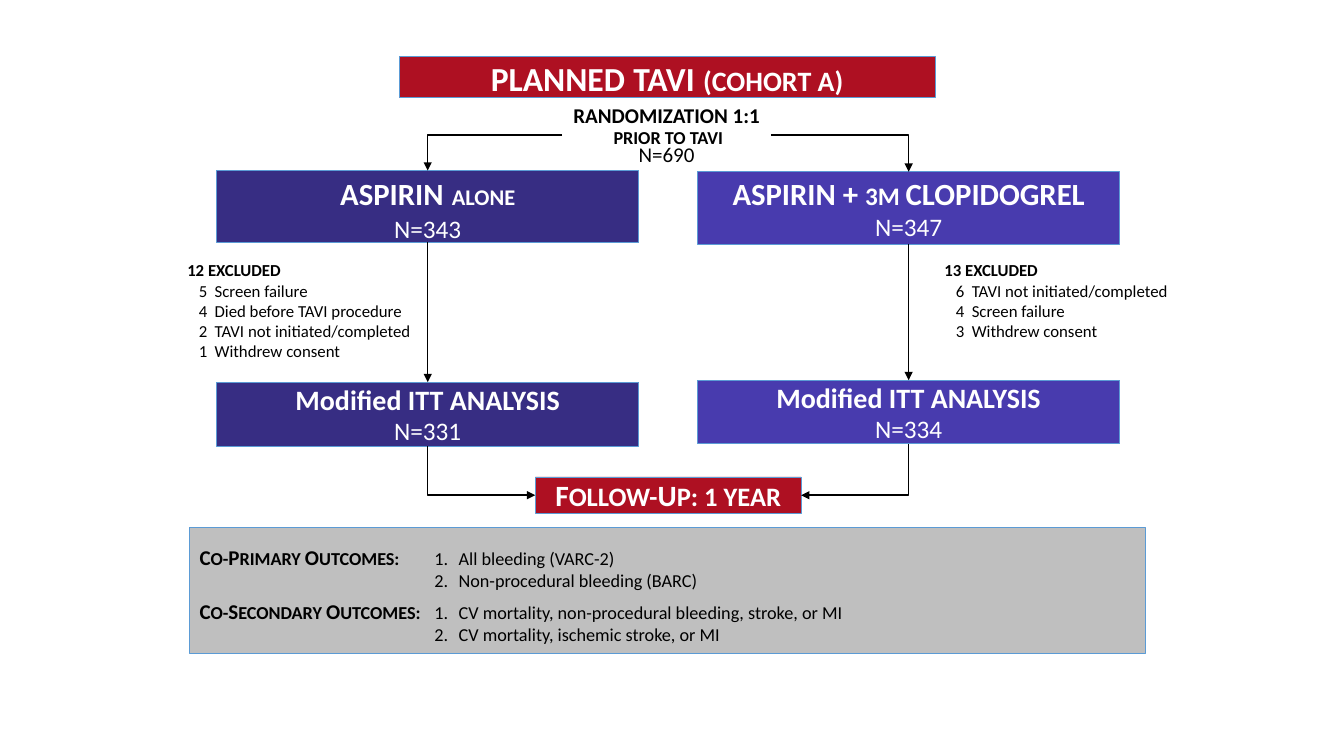
"""Build the flow chart of the TAVI trial, cohort A."""
from lxml.etree import SubElement
from pptx import Presentation
from pptx.dml.color import RGBColor
from pptx.enum.shapes import MSO_CONNECTOR as Connector, MSO_SHAPE as Shape
from pptx.enum.text import MSO_ANCHOR as Anchor, PP_ALIGN as Align
from pptx.oxml.ns import qn
from pptx.util import Cm, Pt


def color(value):
    """Turn a hex string into a colour."""
    return RGBColor.from_string(value)


def write(frame, rows, ink, align):
    """Fill a frame with rows of (text, size, bold) spans."""
    for index, row in enumerate(rows):
        para = frame.paragraphs[0] if index == 0 else frame.add_paragraph()
        para.alignment = align
        for text, size, bold in row:
            span = para.add_run()
            span.text = text
            span.font.name = "Calibri"
            span.font.size = Pt(size)
            span.font.bold = bold
            span.font.color.rgb = color(ink)


RED, NAVY, VIOLET, GRAY = "AE1022", "372D83", "483BAE", "BFBFBF"
WHITE, BLACK, BORDER = "FFFFFF", "000000", "5B9BD5"
LEFT_ARM, RIGHT_ARM, ARM_WIDTH = 5.46, 17.58, 10.64
LEFT_AXIS, RIGHT_AXIS = LEFT_ARM + ARM_WIDTH / 2, RIGHT_ARM + ARM_WIDTH / 2

deck = Presentation()
deck.slide_width, deck.slide_height = Cm(33.87), Cm(19.05)
page = deck.slides.add_slide(deck.slide_layouts[6])

itt_title = [("Modified ITT ANALYSIS", 20, True)]
boxes = {
    "planned": (10.06, 1.42, 13.51, 1.04, RED, [
        [("PLANNED", 24, True), (" ", 26, True), ("TAVI", 24, True),
         (" ", 26, True), ("(COHORT A)", 20, True)]]),
    "aspirin": (LEFT_ARM, 4.3, ARM_WIDTH, 1.81, NAVY, [
        [("ASPIRIN", 22, True), (" ", 26, True), ("ALONE", 16, True)],
        [("N=343", 18, False)]]),
    "clopidogrel": (RIGHT_ARM, 4.33, ARM_WIDTH, 1.82, VIOLET, [
        [("ASPIRIN + ", 22, True), ("3M ", 18, True), ("CLOPIDOGREL", 22, True)],
        [("N=347", 18, False)]]),
    "follow_up": (13.49, 12.02, 6.7, 0.91, RED, [
        [("F", 21, True), ("OLLOW-", 19, True), ("U", 21, True),
         ("P: 1 YEAR", 19, True)]]),
    "aspirin_itt": (LEFT_ARM, 9.63, ARM_WIDTH, 1.61, NAVY,
                    [itt_title, [("N=331", 18, False)]]),
    "clopidogrel_itt": (RIGHT_ARM, 9.58, ARM_WIDTH, 1.6, VIOLET,
                        [itt_title, [("N=334", 18, False)]]),
    "outcomes": (4.78, 13.3, 24.08, 3.16, GRAY, []),
}
shapes = {}
for name, (left, top, width, height, fill, rows) in boxes.items():
    box = page.shapes.add_shape(
        Shape.RECTANGLE, Cm(left), Cm(top), Cm(width), Cm(height))
    box.shadow.inherit = False
    box.fill.solid()
    box.fill.fore_color.rgb = color(fill)
    box.line.color.rgb = color(BORDER)
    box.line.width = Pt(0.5)
    box.text_frame.word_wrap = True
    box.text_frame.vertical_anchor = Anchor.MIDDLE
    write(box.text_frame, rows, WHITE, Align.CENTER)
    shapes[name] = box

outcomes = [
    (("CO-", "PRIMARY ", "OUTCOMES:"),
     "All bleeding (VARC-2)", "Non-procedural bleeding (BARC)"),
    (("CO-", "SECONDARY ", "OUTCOMES:"),
     "CV mortality, non-procedural bleeding, stroke, or MI",
     "CV mortality, ischemic stroke, or MI"),
]
outcome_rows = []
for words, first, second in outcomes:
    label = []
    for word in words:
        label += [(word[0], 15, True), (word[1:], 13, True)]
    outcome_rows += [label + [(f"\t1.\t{first}", 13, False)],
                     [(f"\t2.\t{second}", 13, False)]]
frame = shapes["outcomes"].text_frame
frame.margin_top = Cm(0.34)
write(frame, outcome_rows, BLACK, Align.LEFT)
frame.paragraphs[2].space_before = Pt(4.9)
for para in frame.paragraphs:
    tabs = SubElement(para._p.get_or_add_pPr(), qn("a:tabLst"))
    for stop in (5.92, 6.53):
        SubElement(tabs, qn("a:tab"), pos=str(Cm(stop)), algn="l")

captions = [
    (14.17, 2.47, 5.26, 1.88,
     [[("RANDOMIZATION 1:1", 15, True)], [("N=690", 15, False)]]),
    (15.19, 3.05, 3.3, 0.81, [[("PRIOR TO TAVI", 13, True)]]),
]
for left, top, width, height, rows in captions:
    box = page.shapes.add_textbox(Cm(left), Cm(top), Cm(width), Cm(height))
    box.text_frame.word_wrap = False
    write(box.text_frame, rows, BLACK, Align.CENTER)
    for para in box.text_frame.paragraphs[1:]:
        para.space_before = Pt(9.8)

exclusions = [
    (4.47, 8.2, 3.33, "12 EXCLUDED",
     ["5\tScreen failure", "4\tDied before TAVI procedure",
      "2\tTAVI not initiated/completed", "1\tWithdrew consent"]),
    (23.55, 6.3, 2.31, "13 EXCLUDED",
     ["6\tTAVI not initiated/completed", "4\tScreen failure",
      "3\tWithdrew consent"]),
]
for left, width, height, heading, reasons in exclusions:
    box = page.shapes.add_textbox(Cm(left), Cm(6.43), Cm(width), Cm(height))
    box.text_frame.word_wrap = True
    rows = [[(heading, 12, True)]] + [[(reason, 12, False)] for reason in reasons]
    write(box.text_frame, rows, BLACK, Align.LEFT)
    for para in box.text_frame.paragraphs[1:]:
        properties = para._p.get_or_add_pPr()
        properties.set("marL", str(Cm(0.69)))
        properties.set("indent", str(Cm(-0.4)))

arrows = []
for start, end in (("aspirin", "aspirin_itt"), ("clopidogrel", "clopidogrel_itt")):
    arrow = page.shapes.add_connector(Connector.STRAIGHT, 0, 0, 0, 0)
    arrow.begin_connect(shapes[start], 2)
    arrow.end_connect(shapes[end], 0)
    arrows.append((arrow, "a:tailEnd"))

elbows = [
    (14.17, 3.4, LEFT_AXIS, 4.3, "a:tailEnd"),
    (19.43, 3.4, RIGHT_AXIS, 4.33, "a:tailEnd"),
    (13.49, 12.48, LEFT_AXIS, 11.24, "a:headEnd"),
    (20.19, 12.48, RIGHT_AXIS, 11.18, "a:headEnd"),
]
for start_x, start_y, end_x, end_y, tip in elbows:
    arrow = page.shapes.add_connector(
        Connector.ELBOW, Cm(start_x), Cm(start_y), Cm(end_x), Cm(end_y))
    arrow._element.spPr.find(qn("a:prstGeom")).set("prst", "bentConnector2")
    arrows.append((arrow, tip))

for arrow, tip in arrows:
    arrow.line.color.rgb = color(BLACK)
    arrow.line.width = Pt(1)
    SubElement(arrow.line._get_or_add_ln(), qn(tip), type="triangle")
    SubElement(arrow._element.spPr, qn("a:effectLst"))

deck.save("out.pptx")
